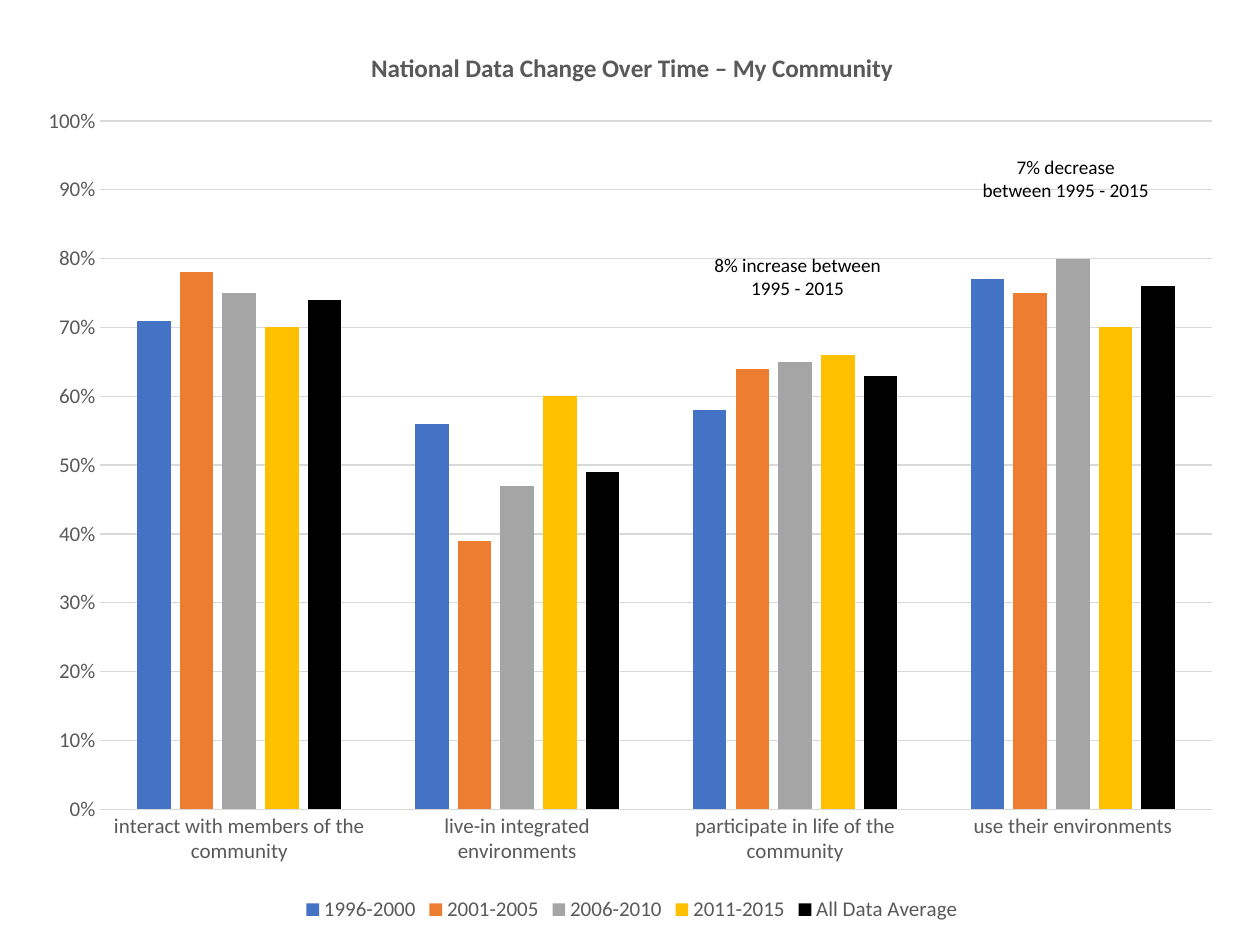
import pptx
import pptx.chart.data
import pptx.dml.color
import pptx.enum.chart
import pptx.enum.text
import pptx.oxml
import pptx.oxml.ns
import pptx.util
from pptx.util import Cm

FONT = "Calibri"
COLORS = {
    "text": "000000",
    "label": "595959",
    "grid": "D9D9D9",
    "1996-2000": "4472C4",
    "2001-2005": "ED7D31",
    "2006-2010": "A5A5A5",
    "2011-2015": "FFC000",
    "All Data Average": "000000",
}
TITLE = "National Data Change Over Time – My Community"
CATEGORIES = [
    "interact with members of the community",
    "live-in integrated environments",
    "participate in life of the community",
    "use their environments",
]
SERIES = {
    "1996-2000": (0.71, 0.56, 0.58, 0.77),
    "2001-2005": (0.78, 0.39, 0.64, 0.75),
    "2006-2010": (0.75, 0.47, 0.65, 0.8),
    "2011-2015": (0.7, 0.6, 0.66, 0.7),
    "All Data Average": (0.74, 0.49, 0.63, 0.76),
}
PLOT_LAYOUT = {"x": 0.06, "y": 0.11, "w": 0.92, "h": 0.76}
NOTES = [
    ("7% decrease between 1995 - 2015", 19.53, 3.0, 3.91),
    ("8% increase between 1995 - 2015", 13.87, 4.98, 4.42),
]


def color(name):
    return pptx.dml.color.RGBColor.from_string(COLORS[name])


def style_font(font, size, color_name, bold=False):
    font.name = FONT
    font.size = pptx.util.Pt(size)
    font.bold = bold
    font.color.rgb = color(color_name)


def style_line(line):
    line.color.rgb = color("grid")
    line.width = pptx.util.Pt(0.75)


def place_plot_area(chart):
    plot_area = chart._chartSpace.chart.plotArea
    for layout in plot_area.findall(pptx.oxml.ns.qn("c:layout")):
        plot_area.remove(layout)
    modes = '<c:xMode val="edge"/><c:yMode val="edge"/>'
    sizes = "".join(f'<c:{key} val="{value}"/>' for key, value in PLOT_LAYOUT.items())
    plot_area.insert(0, pptx.oxml.parse_xml(
        f'<c:layout {pptx.oxml.ns.nsdecls("c")}><c:manualLayout>'
        f'<c:layoutTarget val="inner"/>{modes}{sizes}</c:manualLayout></c:layout>'))


def style_axes(chart):
    for axis in (chart.category_axis, chart.value_axis):
        axis.major_tick_mark = pptx.enum.chart.XL_TICK_MARK.NONE
        axis.minor_tick_mark = pptx.enum.chart.XL_TICK_MARK.NONE
        style_font(axis.tick_labels.font, 12, "label")
    style_line(chart.category_axis.format.line)
    value_axis = chart.value_axis
    value_axis.format.line.fill.background()
    value_axis.minimum_scale = 0
    value_axis.maximum_scale = 1
    value_axis.major_unit = 0.1
    value_axis.has_major_gridlines = True
    style_line(value_axis.major_gridlines.format.line)
    value_axis.tick_labels.number_format = "0%"
    value_axis.tick_labels.number_format_is_linked = False


def add_title(chart):
    chart.has_title = True
    paragraph = chart.chart_title.text_frame.paragraphs[0]
    paragraph.text = TITLE
    style_font(paragraph.font, 14.4, "label", bold=True)
    chart.chart_title.include_in_layout = False


def add_legend(chart):
    chart.has_legend = True
    chart.legend.position = pptx.enum.chart.XL_LEGEND_POSITION.BOTTOM
    chart.legend.include_in_layout = False
    style_font(chart.legend.font, 12, "label")


def add_column_chart(slide):
    data = pptx.chart.data.CategoryChartData(number_format="0%")
    data.categories = CATEGORIES
    for name, values in SERIES.items():
        data.add_series(name, values)
    chart = slide.shapes.add_chart(
        pptx.enum.chart.XL_CHART_TYPE.COLUMN_CLUSTERED,
        Cm(0.56), Cm(0.43), Cm(24.36), Cm(18.26), data).chart
    style_font(chart.font, 12, "text")
    add_title(chart)
    add_legend(chart)
    style_axes(chart)
    place_plot_area(chart)
    plot = chart.plots[0]
    plot.gap_width = 219
    plot.overlap = -27
    plot.vary_by_categories = False
    for series in plot.series:
        series.format.fill.solid()
        series.format.fill.fore_color.rgb = color(series.name)


def add_note(slide, text, left, top, width):
    shape = slide.shapes.add_textbox(Cm(left), Cm(top), Cm(width), Cm(1.19))
    frame = shape.text_frame
    frame.word_wrap = True
    frame.auto_size = pptx.enum.text.MSO_AUTO_SIZE.SHAPE_TO_FIT_TEXT
    paragraph = frame.paragraphs[0]
    paragraph.text = text
    paragraph.alignment = pptx.enum.text.PP_ALIGN.CENTER
    style_font(paragraph.font, 11, "text")


def main():
    presentation = pptx.Presentation()
    presentation.slide_width = Cm(25.4)
    presentation.slide_height = Cm(19.05)
    slide = presentation.slides.add_slide(presentation.slide_layouts[6])
    add_column_chart(slide)
    for note in NOTES:
        add_note(slide, *note)
    presentation.save("out.pptx")


if __name__ == "__main__":
    main()
